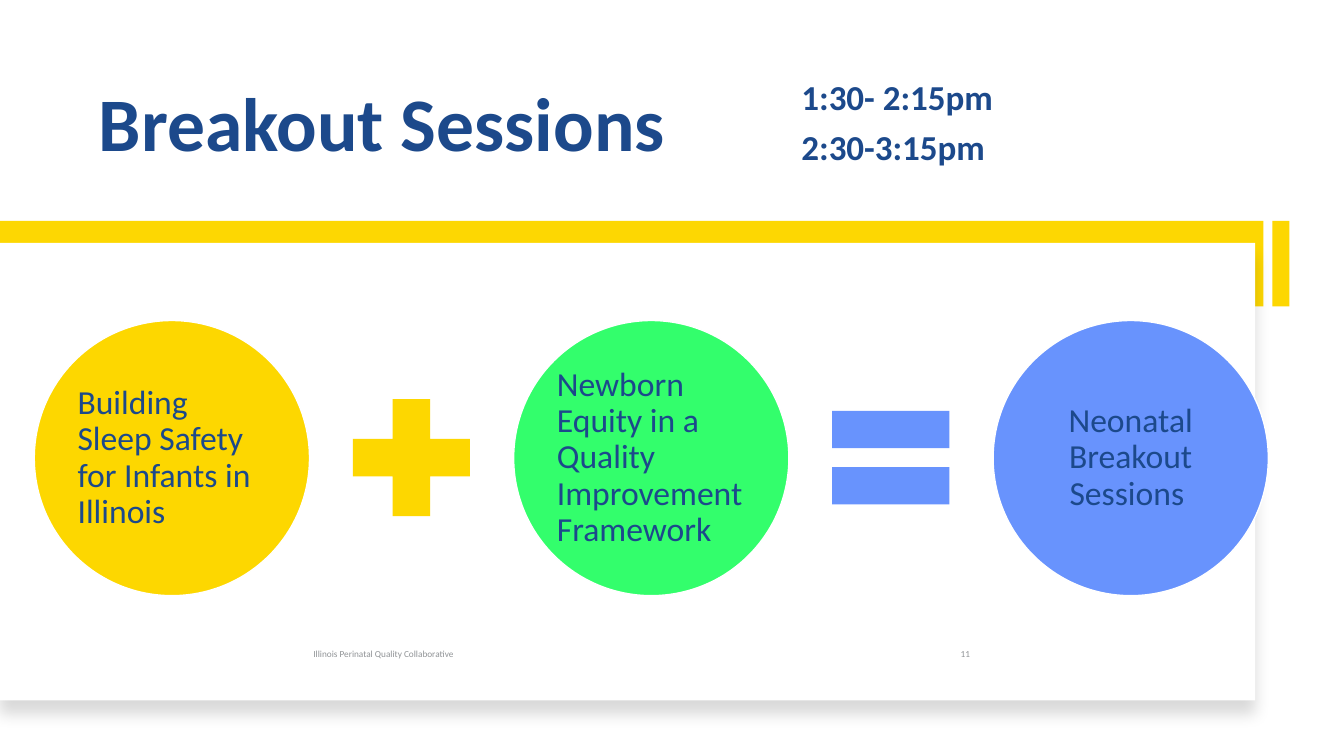
from lxml import etree
from pptx import Presentation
from pptx.dml.color import RGBColor
from pptx.enum.shapes import MSO_SHAPE
from pptx.enum.text import MSO_ANCHOR, MSO_AUTO_SIZE, PP_ALIGN
from pptx.oxml import parse_xml
from pptx.oxml.ns import nsdecls, qn
from pptx.util import Inches, Pt

RECT, OVAL = MSO_SHAPE.RECTANGLE, MSO_SHAPE.OVAL
PLUS, EQUAL = MSO_SHAPE.MATH_PLUS, MSO_SHAPE.MATH_EQUAL
TOP, MID, LOW = MSO_ANCHOR.TOP, MSO_ANCHOR.MIDDLE, MSO_ANCHOR.BOTTOM
LEFT, RIGHT, CENTER = PP_ALIGN.LEFT, PP_ALIGN.RIGHT, PP_ALIGN.CENTER

NAVY = RGBColor(0x1C, 0x49, 0x8B)
GOLD = RGBColor(0xFD, 0xD7, 0x02)
YELLOW = RGBColor(0xFD, 0xD7, 0x00)
GREEN = RGBColor(0x33, 0xFE, 0x6C)
BLUE = RGBColor(0x68, 0x93, 0xFD)
GRAY = RGBColor(0x91, 0x94, 0x97)
WHITE = RGBColor(0xFF, 0xFF, 0xFF)

deck = Presentation()
deck.slide_width, deck.slide_height = Inches(13.33), Inches(7.5)
slide = deck.slides.add_slide(deck.slide_layouts[5])
shapes = slide.shapes


def add_shape(kind, box, fill):
    shape = shapes.add_shape(kind, *map(Inches, box))
    shape.shadow.inherit = False
    shape.fill.solid()
    shape.fill.fore_color.rgb = fill
    shape.line.fill.background()
    return shape


def write(shape, lines, size, anchor=MID, align=LEFT, color=NAVY, bold=False,
          pitch=1.0):
    frame = shape.text_frame
    frame.word_wrap = True
    frame.auto_size = MSO_AUTO_SIZE.NONE
    frame.vertical_anchor = anchor
    frame.text = "\n".join(lines)
    look = {"name": "Calibri", "size": Pt(size), "bold": bold}
    for para in frame.paragraphs:
        para.alignment = align
        para.line_spacing = pitch
        for key, value in look.items():
            setattr(para.font, key, value)
        para.font.color.rgb = color
    return frame


# Heading and times
title = shapes.title
title.left, title.top = Inches(0.88), Inches(0.42)
title.width, title.height = Inches(7.16), Inches(1.3)
write(title, ["Breakout Sessions "], 54, LOW, bold=True, pitch=0.9)

times = shapes.add_textbox(*map(Inches, (7.85, 0.7, 2.51, 1.03)))
frame = write(times, ["1:30- 2:15pm", "2:30-3:15pm"], 25, TOP, bold=True)
frame.paragraphs[1].space_before = Pt(6)

# Gold bars and the white panel with its soft shadow
add_shape(RECT, (12.62, 2.19, 0.17, 0.85), GOLD)
add_shape(RECT, (0, 2.19, 12.53, 0.85), GOLD)
panel = add_shape(RECT, (0, 2.41, 12.45, 4.54), WHITE)
effects = panel._element.spPr.find(qn("a:effectLst"))
effects.append(parse_xml(
    f'<a:outerShdw {nsdecls("a")} blurRad="{Pt(11)}" dist="{Pt(10)}" '
    'dir="5400000" algn="t" rotWithShape="0"><a:srgbClr val="000000">'
    '<a:alpha val="15000"/></a:srgbClr></a:outerShdw>'))

# Footer
for left, width, text, align in (
        (3.01, 2.51, "Illinois Perinatal Quality Collaborative", LEFT),
        (8.04, 1.68, "11", RIGHT)):
    note = shapes.add_textbox(*map(Inches, (left, 6.38, width, 0.22)))
    write(note, [text], 6.6, align=align, color=GRAY)

# Sum of sessions: circles at an equal pitch, a sign between each pair
STEP = 4.755
circles = (
    ("Building Sleep Safety for Infants in Illinois", YELLOW, LEFT),
    ("Newborn Equity in a Quality Improvement Framework", GREEN, LEFT),
    ("Neonatal Breakout Sessions ", BLUE, CENTER),
)
for i, (text, fill, align) in enumerate(circles):
    circle = add_shape(OVAL, (0.34 + i * STEP, 3.18, 2.73, 2.73), fill)
    circle.line.color.rgb = WHITE
    circle.line.width = Pt(1)
    frame = write(circle, [text], 24, align=align, pitch=0.9)
    for side in ("left", "top", "right", "bottom"):
        setattr(frame, f"margin_{side}", Inches(0.03))

signs = ((PLUS, YELLOW, (0.235,)), (EQUAL, BLUE, (0.235, 0.118)))
for i, (kind, fill, ratios) in enumerate(signs):
    sign = add_shape(kind, (3.29 + i * STEP, 3.75, 1.58, 1.58), fill)
    for j, ratio in enumerate(ratios):
        sign.adjustments[j] = ratio

deck.save("out.pptx")
